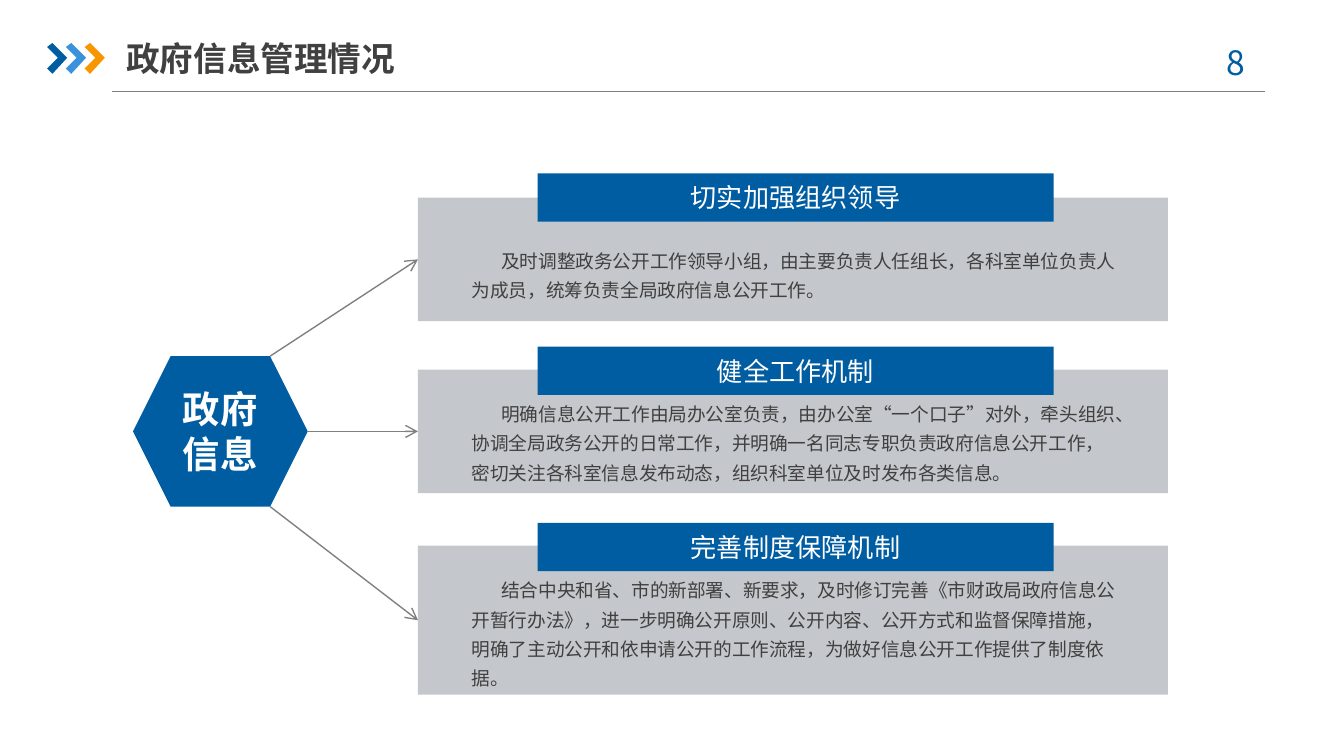
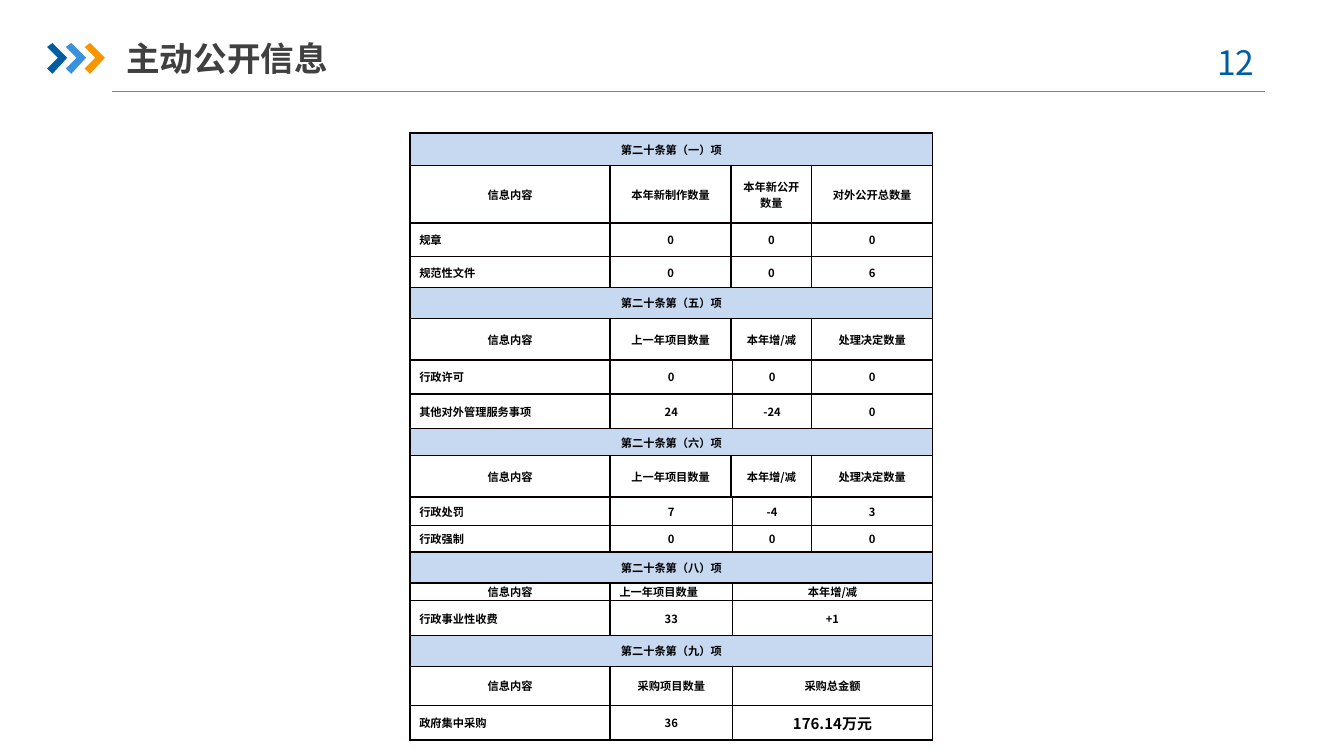
from dataclasses import dataclass
from itertools import accumulate
from typing import Any

import lxml.etree
import pptx
import pptx.dml.color
import pptx.enum.shapes
import pptx.enum.text
import pptx.oxml.ns
import pptx.util

Inches = pptx.util.Inches
Shapes = pptx.enum.shapes.MSO_SHAPE
Align = pptx.enum.text.PP_ALIGN
Anchor = pptx.enum.text.MSO_ANCHOR
qn = pptx.oxml.ns.qn


@dataclass(frozen=True)
class Theme:
    font: str = "Noto Sans CJK SC"
    latin_font: str = "Calibri"
    blue: str = "005DA2"
    sky: str = "3992DB"
    orange: str = "F79600"
    panel: str = "C4C7CB"
    rule: str = "808080"
    ink: str = "404040"
    white: str = "FFFFFF"
    black: str = "000000"
    section: str = "C6D9F1"
    border: str = "080000"
    title_size: float = 18
    hub_size: float = 20
    heading_size: float = 14
    body_size: float = 10
    cell_size: float = 6
    amount_size: float = 8
    line_width: float = 0.75
    border_width: float = 1


@dataclass(frozen=True)
class Box:
    left: float
    top: float
    width: float
    height: float

    def lengths(self) -> tuple:
        return tuple(map(Inches, (self.left, self.top, self.width, self.height)))


@dataclass(frozen=True)
class Measure:
    heading: str
    detail: str
    top: float
    panel_top: float
    panel_height: float
    detail_box: Box


@dataclass(frozen=True)
class Record:
    height: float
    texts: tuple[str, ...]
    spans: tuple[int, ...]
    header: bool = False


THEME = Theme()
SLIDE_WIDTH = 10
CHEVRON = ((0, 0.35), (0.04, 0.32), (0.15, 0.43), (0.04, 0.55), (0, 0.51), (0.08, 0.43))
HUB = Box(0.99, 2.65, 1.3, 1.12)
PANEL_LEFT = 3.11
TIGHT = (0.08, 0.04, 0.08, 0.04)
DETAIL_MARGINS = (0.07, 0.04, 0.07, 0.04)

MEASURES = (
    Measure("切实加强组织领导",
            "及时调整政务公开工作领导小组，由主要负责人任组长，各科室单位负责人为成员，"
            "统筹负责全局政府信息公开工作。", 1.29, 1.47, 0.92, Box(3.44, 1.77, 4.96, 0.51)),
    Measure("健全工作机制",
            "明确信息公开工作由局办公室负责，由办公室“一个口子”对外，牵头组织、协调全局政务公开的日常工作，"
            "并明确一名同志专职负责政府信息公开工作，密切关注各科室信息发布动态，"
            "组织科室单位及时发布各类信息。", 2.58, 2.75, 0.92, Box(3.44, 2.91, 4.96, 0.73)),
    Measure("完善制度保障机制",
            "结合中央和省、市的新部署、新要求，及时修订完善《市财政局政府信息公开暂行办法》，"
            "进一步明确公开原则、公开内容、公开方式和监督保障措施，"
            "明确了主动公开和依申请公开的工作流程，为做好信息公开工作提供了制度依据。",
            3.89, 4.06, 1.11, Box(3.44, 4.22, 4.96, 0.95)),
)

FULL = (5,)
LATE = (1, 1, 2, 1)
EARLY = (1, 2, 1, 1)
THREE = (1, 2, 2)
YEARLY = ("信息内容", "上一年项目数量", "本年增/减", "处理决定数量")
COLUMN_WIDTHS = (1.49, 0.9, 0.01, 0.59, 0.9)
RECORDS = (
    Record(0.24, ("第二十条第（一）项",), FULL, True),
    Record(0.43, ("信息内容", "本年新|制作数量", "本年新|公开数量", "对外公开总数量"), LATE, True),
    Record(0.25, ("规章", "0", "0", "0"), LATE),
    Record(0.23, ("规范性文件", "0", "0", "6"), LATE),
    Record(0.23, ("第二十条第（五）项",), FULL, True),
    Record(0.31, YEARLY, LATE, True),
    Record(0.25, ("行政许可", "0", "0", "0"), EARLY),
    Record(0.26, ("其他对外管理服务事项", "24", "-24", "0"), EARLY),
    Record(0.2, ("第二十条第（六）项",), FULL, True),
    Record(0.31, YEARLY, LATE, True),
    Record(0.21, ("行政处罚", "7", "-4", "3"), EARLY),
    Record(0.2, ("行政强制", "0", "0", "0"), EARLY),
    Record(0.23, ("第二十条第（八）项",), FULL, True),
    Record(0.13, YEARLY[:3], THREE, True),
    Record(0.26, ("行政事业性收费", "33", "+1"), THREE),
    Record(0.23, ("第二十条第（九）项",), FULL, True),
    Record(0.29, ("信息内容", "采购项目数量", "采购总金额"), THREE, True),
    Record(0.26, ("政府集中采购", "36", "176.14万元"), THREE),
)
FEE_HEADER_ROW = 13


def rgb(colour: str) -> pptx.dml.color.RGBColor:
    return pptx.dml.color.RGBColor.from_string(colour)


def format_run(run: Any, size: float, colour: str, bold: bool = False,
               latin: str = THEME.font) -> None:
    run.font.name = latin
    run.font.size = pptx.util.Pt(size)
    run.font.bold = bold
    run.font.color.rgb = rgb(colour)
    east_asian = lxml.etree.Element(qn("a:ea"), typeface=THEME.font)
    run.font._element.find(qn("a:latin")).addnext(east_asian)


def write(shape: Any, text: str, size: float, colour: str, bold: bool = False,
          align: Any = Align.CENTER, anchor: Any = Anchor.MIDDLE,
          margins: tuple[float, ...] = TIGHT) -> Any:
    frame = shape.text_frame
    frame.text = text
    frame.word_wrap = True
    frame.auto_size = pptx.enum.text.MSO_AUTO_SIZE.NONE
    frame.vertical_anchor = anchor
    (frame.margin_left, frame.margin_top,
     frame.margin_right, frame.margin_bottom) = map(Inches, margins)
    paragraph = frame.paragraphs[0]
    paragraph.alignment = align
    format_run(paragraph.runs[0], size, colour, bold)
    return paragraph


def paint(shape: Any, colour: str) -> Any:
    shape.shadow.inherit = False
    shape.fill.solid()
    shape.fill.fore_color.rgb = rgb(colour)
    shape.line.fill.background()
    return shape


def add_block(slide: Any, preset: Any, box: Box, colour: str) -> Any:
    return paint(slide.shapes.add_shape(preset, *box.lengths()), colour)


def add_line(slide: Any, start: tuple[float, float], end: tuple[float, float],
             arrow: bool = False) -> None:
    line = slide.shapes.add_connector(
        pptx.enum.shapes.MSO_CONNECTOR.STRAIGHT, *map(Inches, start + end))
    line.line.color.rgb = rgb(THEME.rule)
    line.line.width = pptx.util.Pt(THEME.line_width)
    properties = line._element.spPr
    if arrow:
        lxml.etree.SubElement(properties.find(qn("a:ln")), qn("a:tailEnd"), type="arrow")
    lxml.etree.SubElement(properties, qn("a:effectLst"))


def add_page(deck: Any, title: str, number: int) -> Any:
    slide = deck.slides.add_slide(deck.slide_layouts[5])
    add_line(slide, (0.83, 0.68), (9.41, 0.68))
    chevrons = slide.shapes.add_group_shape()
    for index, colour in enumerate((THEME.blue, THEME.sky, THEME.orange)):
        left = 0.35 + 0.14 * index
        points = [(Inches(left + x), Inches(y)) for x, y in CHEVRON]
        outline = chevrons.shapes.build_freeform(*points[0])
        outline.add_line_segments(points[1:], close=True)
        paint(outline.convert_to_shape(), colour)
    page_number = slide.shapes.add_textbox(*Box(8.83, 0.26, 0.73, 0.4).lengths())
    write(page_number, str(number), THEME.title_size, THEME.blue,
          anchor=Anchor.TOP, margins=(0.1, 0.05, 0.1, 0.05))
    heading = slide.shapes.title
    heading.left, heading.top, heading.width, heading.height = Box(0.94, 0.22, 2.33, 0.42).lengths()
    write(heading, title, THEME.title_size, THEME.ink, True, Align.LEFT,
          margins=(0, 0.05, 0, 0.05))
    return slide


def add_measure(slide: Any, measure: Measure, arrow_start: tuple[float, float]) -> None:
    panel = Box(PANEL_LEFT, measure.panel_top, 5.58, measure.panel_height)
    add_block(slide, Shapes.RECTANGLE, panel, THEME.panel)
    banner = add_block(slide, Shapes.RECTANGLE, Box(4, measure.top, 3.84, 0.36), THEME.blue)
    write(banner, measure.heading, THEME.heading_size, THEME.white)
    detail = slide.shapes.add_textbox(*measure.detail_box.lengths())
    paragraph = write(detail, measure.detail, THEME.body_size, THEME.ink,
                      align=Align.LEFT, anchor=Anchor.TOP, margins=DETAIL_MARGINS)
    paragraph.line_spacing = 1.3
    paragraph._p.get_or_add_pPr().set("indent", str(Inches(0.22)))
    add_line(slide, arrow_start, (PANEL_LEFT, panel.top + panel.height / 2), True)


def build_management(deck: Any) -> None:
    slide = add_page(deck, "政府信息管理情况", 8)
    hub = add_block(slide, Shapes.HEXAGON, HUB, THEME.blue)
    write(hub, "政府信息", THEME.hub_size, THEME.white, True)
    right = HUB.left + HUB.width
    corner = right - HUB.height / 4
    starts = ((corner, HUB.top), (right, HUB.top + HUB.height / 2), (corner, HUB.top + HUB.height))
    for measure, start in zip(MEASURES, starts):
        add_measure(slide, measure, start)


def style_cell(cell: Any, colour: str | None) -> None:
    cell.margin_left = cell.margin_right = Inches(0.07)
    cell.margin_top = cell.margin_bottom = Inches(0)
    cell.vertical_anchor = Anchor.MIDDLE
    properties = cell._tc.get_or_add_tcPr()
    for side in ("lnL", "lnR", "lnT", "lnB"):
        edge = lxml.etree.SubElement(properties, qn(f"a:{side}"),
                                     w=str(pptx.util.Pt(THEME.border_width)))
        fill = lxml.etree.SubElement(edge, qn("a:solidFill"))
        lxml.etree.SubElement(fill, qn("a:srgbClr"), val=THEME.border)
    if colour:
        cell.fill.solid()
        cell.fill.fore_color.rgb = rgb(colour)
    else:
        cell.fill.background()


def fill_cell(cell: Any, text: str, align: Any, size: float) -> None:
    paragraph = cell.text_frame.paragraphs[0]
    paragraph.alignment = align
    for part, latin in zip(text.split("|"), (THEME.font, THEME.latin_font)):
        run = paragraph.add_run()
        run.text = part
        format_run(run, size, THEME.black, True, latin)


def build_disclosure(deck: Any) -> None:
    slide = add_page(deck, "主动公开信息", 12)
    area = Box(3.05, 0.99, sum(COLUMN_WIDTHS), sum(record.height for record in RECORDS))
    table = slide.shapes.add_table(len(RECORDS), len(COLUMN_WIDTHS), *area.lengths()).table
    table.first_row = table.horz_banding = False
    for column, width in zip(table.columns, COLUMN_WIDTHS):
        column.width = Inches(width)
    for row, record in enumerate(RECORDS):
        table.rows[row].height = Inches(record.height)
        for cell in table.rows[row].cells:
            style_cell(cell, THEME.section if record.spans == FULL else None)
        for start, span, text in zip(accumulate(record.spans, initial=0), record.spans, record.texts):
            cell = table.cell(row, start)
            if span > 1:
                cell.merge(table.cell(row, start + span - 1))
            is_label = start == 0 and not record.header
            is_fee_header = row == FEE_HEADER_ROW and start == 1
            align = Align.LEFT if is_label or is_fee_header else Align.CENTER
            size = THEME.amount_size if text.endswith("万元") else THEME.cell_size
            fill_cell(cell, text, align, size)


def main() -> None:
    deck = pptx.Presentation()
    deck.slide_width = Inches(SLIDE_WIDTH)
    deck.slide_height = Inches(SLIDE_WIDTH * 9 / 16)
    build_management(deck)
    build_disclosure(deck)
    deck.save("out.pptx")


if __name__ == "__main__":
    main()
